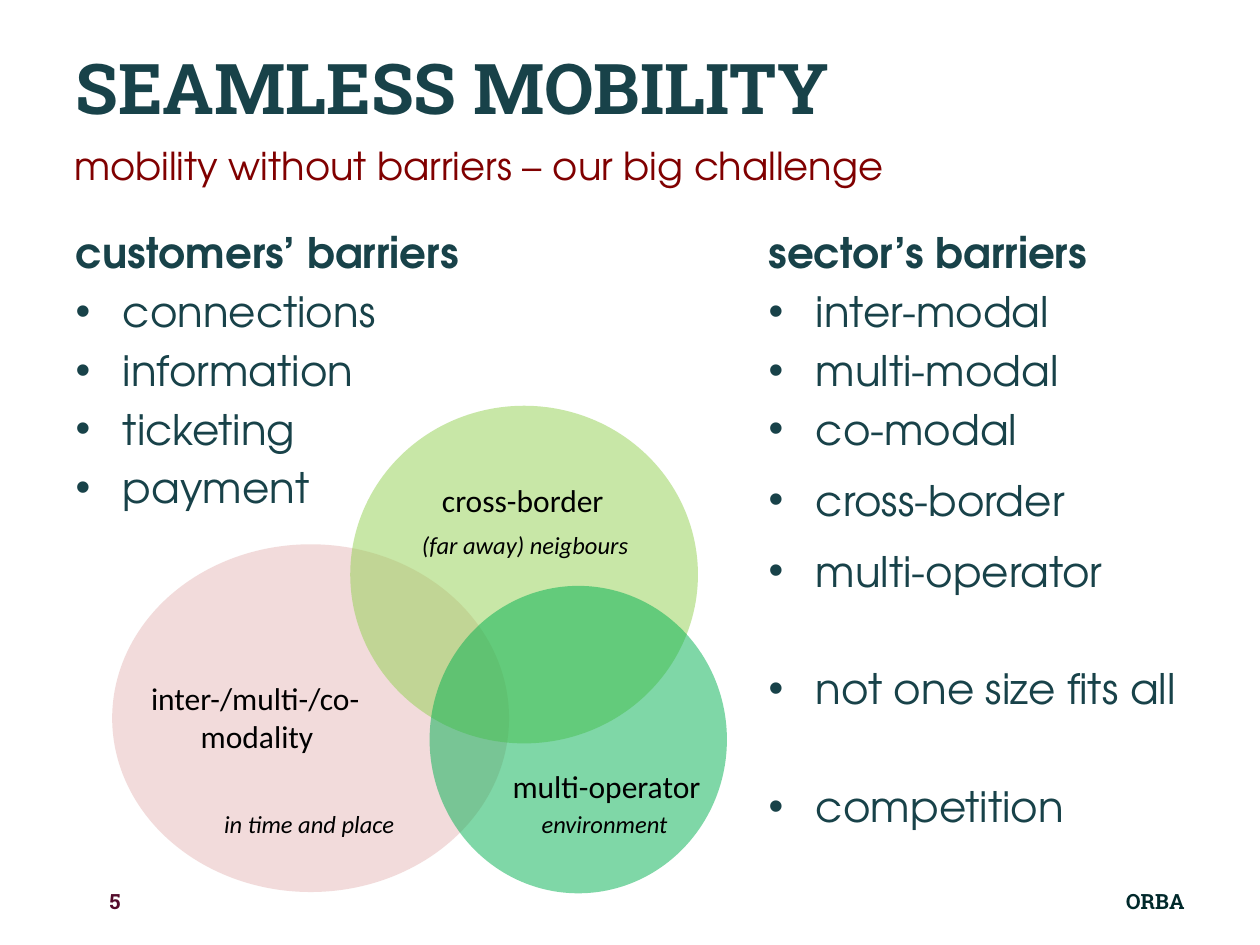
import pptx
import pptx.util
import pptx.dml.color
import pptx.enum.shapes
import pptx.enum.text
import pptx.oxml.ns
from lxml import etree

Inches, Pt = pptx.util.Inches, pptx.util.Pt
RGBColor = pptx.dml.color.RGBColor
ALIGN = pptx.enum.text.PP_ALIGN
ANCHOR = pptx.enum.text.MSO_ANCHOR
qn = pptx.oxml.ns.qn

TEAL = RGBColor(0x18, 0x42, 0x49)
MAROON = RGBColor(0x80, 0x00, 0x00)
NAVY = RGBColor(0x00, 0x29, 0x2B)
PLUM = RGBColor(0x54, 0x0B, 0x2B)
BLACK = RGBColor(0x00, 0x00, 0x00)
PINK = RGBColor(0xE6, 0xB9, 0xB8)
LIME = RGBColor(0x92, 0xD0, 0x50)
GREEN = RGBColor(0x00, 0xB0, 0x50)
SLAB, ROUND, SANS = "Roboto Slab", "TeX Gyre Adventor", "Calibri"


def style(para, name, size, color, bold=False, italic=False):
    font = para.font
    font.name, font.size = name, Pt(size)
    font.bold, font.italic = bold, italic
    font.color.rgb = color


def place(shape, box):
    shape.left, shape.top, shape.width, shape.height = map(Inches, box)


deck = pptx.Presentation()
deck.slide_width, deck.slide_height = Inches(10), Inches(7.5)
slide = deck.slides.add_slide(deck.slide_layouts[3])
title, left, right = slide.placeholders

# Title
place(title, (0.5, 0.3, 9, 1.25))
title.text_frame.text = "SEAMLESS MOBILITY"
title.text_frame.vertical_anchor = ANCHOR.TOP
para = title.text_frame.paragraphs[0]
para.alignment = ALIGN.LEFT
style(para, SLAB, 40, TEAL, bold=True)

# Two lists: heading, then (item, space before in points)
lists = [
    (left, (0.5, 1.75, 4.44, 4.95), "customers’ barriers",
     [("connections", 4.8), ("information", 4.8), ("ticketing", 4.8),
      ("payment", 4.8)]),
    (right, (6, 1.75, 3.81, 5.6), "sector’s barriers",
     [("inter-modal", 4.8), ("multi-modal", 4.8), ("co-modal", 4.8),
      ("cross-border", 11.8), ("multi-operator", 11.8),
      ("not one size fits all", 38.4), ("competition", 38.4)]),
]
for holder, box, head, items in lists:
    place(holder, box)
    frame = holder.text_frame
    frame.auto_size = pptx.enum.text.MSO_AUTO_SIZE.NONE
    para = frame.paragraphs[0]
    para.text = head
    para.space_before = Pt(0)
    props = para._p.get_or_add_pPr()
    props.set("marL", "0")
    props.set("indent", "0")
    etree.SubElement(props, qn("a:buNone"))
    style(para, ROUND, 24, TEAL, bold=True)
    for item, gap in items:
        para = frame.add_paragraph()
        para.text = item
        para.space_before = Pt(gap)
        style(para, ROUND, 24, TEAL)

# Subtitle and footer
notes = [
    ("mobility without barriers – our big challenge", (0.49, 1.08, 7.79, 0.69),
     ROUND, 22, MAROON, False, ALIGN.LEFT, ANCHOR.TOP),
    ("ORBA", (6.33, 6.95, 3.17, 0.4),
     SLAB, 12, NAVY, True, ALIGN.RIGHT, ANCHOR.MIDDLE),
    ("5", (0.77, 6.95, 2.33, 0.4),
     SLAB, 12, PLUM, True, ALIGN.LEFT, ANCHOR.MIDDLE),
]
for text, box, name, size, color, bold, align, anchor in notes:
    frame = slide.shapes.add_textbox(*map(Inches, box)).text_frame
    frame.word_wrap = True
    frame.vertical_anchor = anchor
    para = frame.paragraphs[0]
    para.text = text
    para.alignment = align
    style(para, name, size, color, bold)

# Overlapping circles, half transparent
venn = slide.shapes.add_group_shape().shapes
for color, box in [
    (PINK, (0.89, 4.32, 3.15, 2.76)),
    (LIME, (2.78, 3.22, 2.76, 2.68)),
    (GREEN, (3.41, 4.65, 2.36, 2.44)),
]:
    disc = venn.add_shape(pptx.enum.shapes.MSO_SHAPE.OVAL, *map(Inches, box))
    disc.shadow.inherit = False
    disc.line.fill.background()
    disc.fill.solid()
    disc.fill.fore_color.rgb = color
    tint = disc._element.spPr.find(qn("a:solidFill"))[0]
    etree.SubElement(tint, qn("a:alpha"), val="50000")

# Circle labels: large upright names, small italic remarks
for lines, box, size in [
    (["inter-/multi-/co-", "modality"], (1.1, 5.34, 1.88, 0.71), 18),
    (["in time and place"], (1.68, 6.37, 1.68, 0.34), 14),
    (["cross-border"], (3.41, 3.77, 1.67, 0.4), 18),
    (["(far away) neigbours"], (3.25, 4.16, 1.98, 0.34), 14),
    (["multi-operator"], (3.97, 6.04, 1.76, 0.4), 18),
    (["environment"], (4.2, 6.37, 1.21, 0.34), 14),
]:
    frame = venn.add_textbox(*map(Inches, box)).text_frame
    frame.word_wrap = True
    frame.text = "\n".join(lines)
    for para in frame.paragraphs:
        style(para, SANS, size, BLACK, italic=size == 14)
    for para in frame.paragraphs[1:]:
        para.alignment = ALIGN.CENTER

deck.save("out.pptx")
